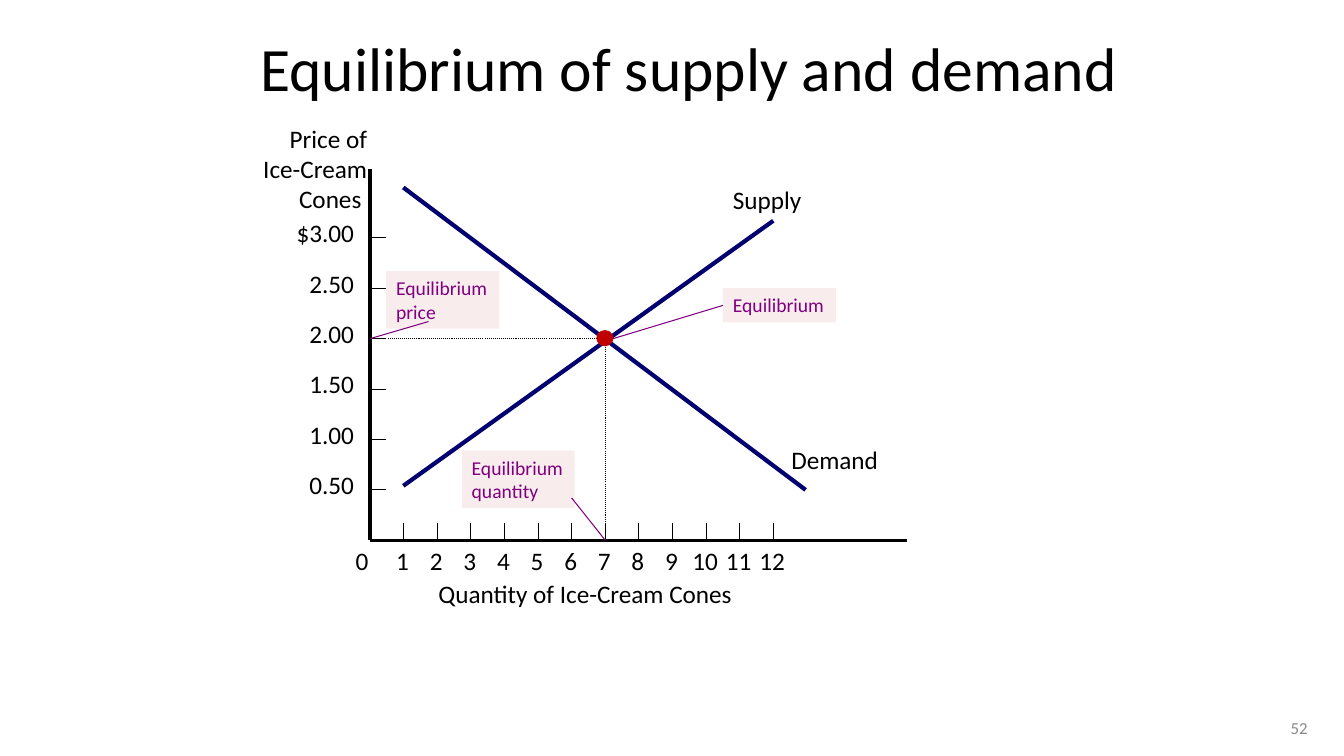
from pptx import Presentation
from pptx.dml.color import RGBColor
from pptx.enum.dml import MSO_LINE
from pptx.enum.shapes import MSO_CONNECTOR, MSO_SHAPE
from pptx.enum.text import MSO_ANCHOR, MSO_AUTO_SIZE, PP_ALIGN
from pptx.oxml.ns import qn
from pptx.util import Inches, Pt

BLACK = RGBColor(0x00, 0x00, 0x00)
NAVY = RGBColor(0x00, 0x00, 0x70)
PURPLE = RGBColor(0x80, 0x00, 0x80)
PINK = RGBColor(0xF8, 0xED, 0xEC)
RED = RGBColor(0xC0, 0x00, 0x00)
GRAY = RGBColor(0x89, 0x89, 0x89)

# Axis origin and inches per cone; one dollar is one inch
X0, Y0, STEP = 3.67, 5.36, 1 / 3

prs = Presentation()
prs.slide_width, prs.slide_height = Inches(13.33), Inches(7.5)
s = prs.slides.add_slide(prs.slide_layouts[6])


def add_text(lines, x, y, w, h, size=18, color=BLACK, align=PP_ALIGN.LEFT,
             fill=None, anchor=MSO_ANCHOR.TOP):
    sp = s.shapes.add_textbox(Inches(x), Inches(y), Inches(w), Inches(h))
    if fill is not None:
        sp.fill.solid()
        sp.fill.fore_color.rgb = fill
    tf = sp.text_frame
    frame_format = {"word_wrap": False, "vertical_anchor": anchor,
                    "auto_size": MSO_AUTO_SIZE.SHAPE_TO_FIT_TEXT}
    for name, value in frame_format.items():
        setattr(tf, name, value)
    for i, line in enumerate(lines):
        p = tf.add_paragraph() if i else tf.paragraphs[0]
        p.alignment = align
        r = p.add_run()
        r.text = line
        for name, value in {"name": "Calibri", "size": Pt(size)}.items():
            setattr(r.font, name, value)
        r.font.color.rgb = color
    return sp


def add_line(x1, y1, x2, y2, width=0.75, color=BLACK, dash=None):
    c = s.shapes.add_connector(MSO_CONNECTOR.STRAIGHT, Inches(x1), Inches(y1),
                               Inches(x2), Inches(y2))
    c.line.width = Pt(width)
    c.line.color.rgb = color
    if dash is not None:
        c.line.dash_style = dash
    sp_pr = c._element.spPr
    sp_pr.append(sp_pr.makeelement(qn("a:effectLst"), {}))
    return c


# Title and slide number
title = add_text(["Equilibrium of supply and demand"], 2, 0.25, 9.67, 1.08,
                 size=44, align=PP_ALIGN.CENTER)
number = add_text(["52"], 12.44, 7.02, 0.89, 0.4, size=12, color=GRAY,
                  align=PP_ALIGN.CENTER, anchor=MSO_ANCHOR.MIDDLE)
for sp in (title, number):
    sp.text_frame.auto_size = MSO_AUTO_SIZE.NONE
    sp.text_frame.word_wrap = True

# Quantity axis
add_line(X0, Y0, 9, Y0, 2.25)
add_text(["0"], 3.42, Y0, 0.34, 0.4, align=PP_ALIGN.CENTER)
for cones in range(1, 13):
    x = X0 + cones * STEP
    w = 0.34 if cones < 10 else 0.46
    add_line(x, Y0 - 0.17, x, Y0)
    add_text([str(cones)], x - 0.01 - w / 2, Y0, w, 0.4, align=PP_ALIGN.CENTER)
add_text(["Quantity of Ice-Cream Cones"], 4.25, 5.69, 3.21, 0.4)

# Price axis
add_line(X0, 1.68, X0, Y0, 2.25)
for half_dollars in range(1, 7):
    price = half_dollars / 2
    top = half_dollars == 6
    w = 0.78 if top else 0.65
    add_line(X0, Y0 - price, X0 + 0.16, Y0 - price)
    add_text([f"${price:.2f}" if top else f"{price:.2f}"],
             3.61 - w, Y0 - price - 0.25, w, 0.4, align=PP_ALIGN.RIGHT)
add_text(["Price of", "Ice-Cream", "Cones "], 2.44, 1.17, 1.3, 1.01,
         align=PP_ALIGN.RIGHT)

# Supply and demand curves
add_line(4, 4.82, 7.67, 2.19, 3, NAVY)
add_text(["Supply"], 7.17, 1.78, 0.89, 0.4)
add_line(4, 1.86, 7.99, 4.86, 3, NAVY)
add_text(["Demand"], 7.75, 4.36, 1.07, 0.4)

# Equilibrium point with guides to both axes
eq_x, eq_y = X0 + 7 * STEP, Y0 - 2
add_line(eq_x, Y0, eq_x, eq_y, dash=MSO_LINE.ROUND_DOT)
add_line(eq_x, eq_y, X0, eq_y, dash=MSO_LINE.ROUND_DOT)
dot = s.shapes.add_shape(MSO_SHAPE.OVAL, Inches(5.92), Inches(3.28),
                         Inches(0.16), Inches(0.15))
dot.shadow.inherit = False
dot.fill.solid()
dot.fill.fore_color.rgb = RED
dot.line.color.rgb = RED
dot.line.width = Pt(0.75)

# Callouts: lines, box, leader
callouts = [
    (["Equilibrium"], (7.17, 2.86, 1.12, 0.34), (6.08, 3.36, 7.17, 3.03)),
    (["Equilibrium", "price"], (3.83, 2.69, 1.12, 0.57), (X0, eq_y, 4.25, 3.19)),
    (["Equilibrium", "quantity"], (4.58, 4.47, 1.12, 0.57), (5.67, 4.94, eq_x, Y0)),
]
for lines, box, leader in callouts:
    sp = add_text(lines, *box, size=14, color=PURPLE, fill=PINK)
    c = add_line(*leader, color=PURPLE)
    if len(lines) == 1:
        c.end_connect(sp, 1)

prs.save("out.pptx")
